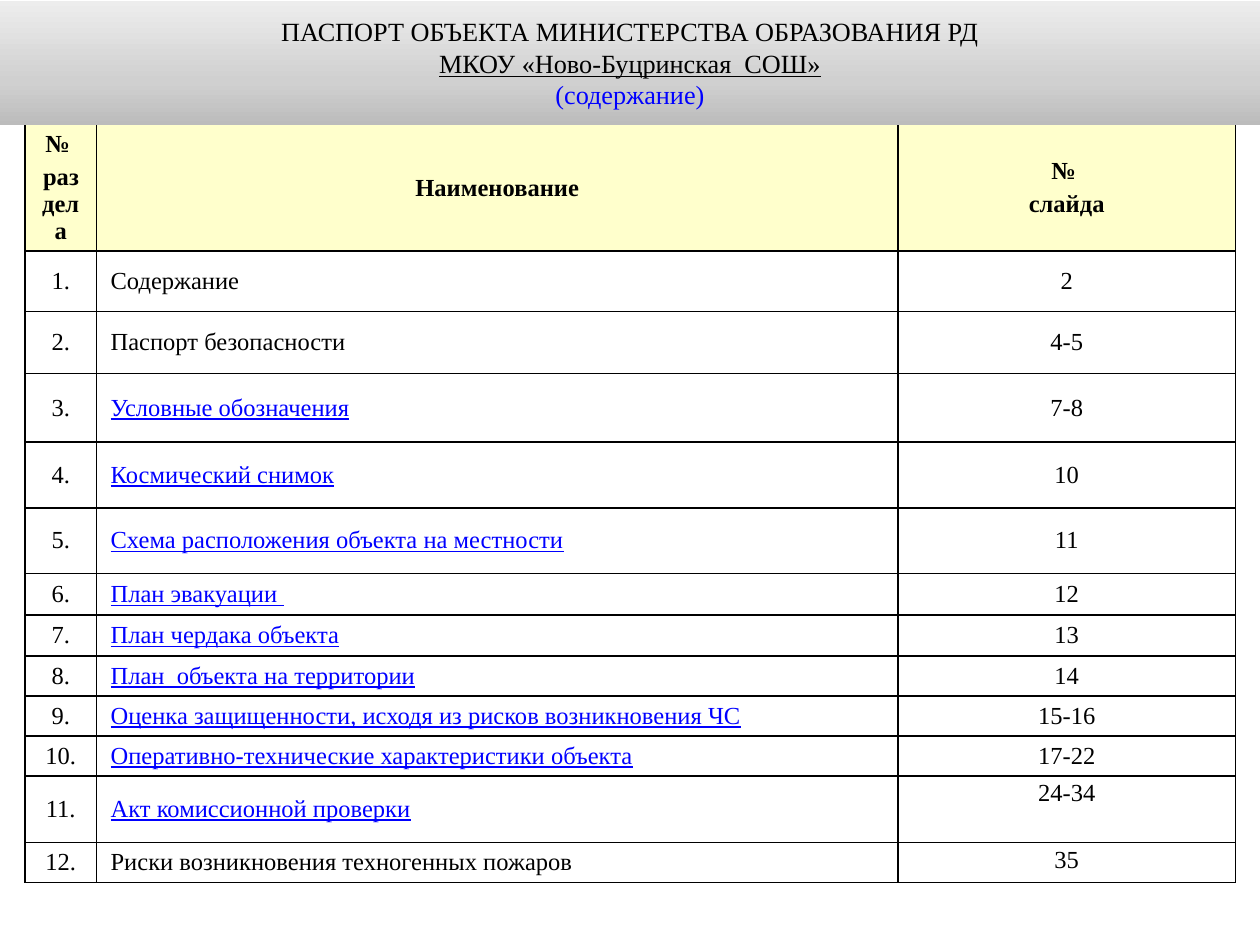
from copy import deepcopy
from dataclasses import dataclass

from lxml.etree import SubElement
from pptx import Presentation
from pptx.dml.color import RGBColor as Color
from pptx.enum.shapes import MSO_SHAPE as Shape
from pptx.enum.text import MSO_ANCHOR as Anchor, PP_ALIGN as Align
from pptx.oxml.ns import qn
from pptx.util import Cm, Pt


@dataclass(frozen=True)
class Theme:
    font: str = "Times New Roman"
    title_size: int = 15
    table_size: int = 14
    text: str = "000000"
    link: str = "0000FF"
    header: str = "FFFFCC"
    body: str = "FFFFFF"
    banner: tuple = ((0, "BCBCBC"), (0.35, "D0D0D0"), (1, "EDEDED"))


theme = Theme()


def write(frame, text, size=theme.table_size, color=theme.text, bold=False, underline=False,
          align=Align.CENTER, before=0, after=0, spacing=1.0):
    paragraph = frame.paragraphs[0]
    if paragraph.runs:
        paragraph = frame.add_paragraph()
    paragraph.alignment = align
    paragraph.space_before = Pt(before)
    paragraph.space_after = Pt(after)
    paragraph.line_spacing = spacing
    run = paragraph.add_run()
    run.text = text
    run.font.name = theme.font
    run.font.size = Pt(size)
    run.font.bold = bold
    run.font.underline = underline
    run.font.color.rgb = Color.from_string(color)


presentation = Presentation()
presentation.slide_width = Cm(25.4)
presentation.slide_height = Cm(19.05)
slide = presentation.slides.add_slide(presentation.slide_layouts[6])

headings = [["№ ", "раздела"], ["Наименование"], ["№ ", "слайда"]]
sections = [
    ("Содержание", "2", False),
    ("Паспорт безопасности", "4-5", False),
    ("Условные обозначения", "7-8", True),
    ("Космический снимок", "10", True),
    ("Схема расположения объекта на местности", "11", True),
    ("План эвакуации ", "12", True),
    ("План чердака объекта", "13", True),
    ("План  объекта на территории", "14", True),
    ("Оценка защищенности, исходя из рисков возникновения ЧС", "15-16", True),
    ("Оперативно-технические характеристики объекта", "17-22", True),
    ("Акт комиссионной проверки", "24-34", True),
    ("Риски возникновения техногенных пожаров", "35", False),
]
column_widths = [1.45, 16.15, 6.81]
row_heights = [2.52, 1.22, 1.25, 1.38, 1.33, 1.32, 0.84, 0.82, 0.8, 0.8, 0.8, 1.34, 0.8]

table = slide.shapes.add_table(
    len(row_heights), len(column_widths), Cm(0.5), Cm(2.51),
    Cm(sum(column_widths)), Cm(sum(row_heights))).table
table.horz_banding = False
for column, width in zip(table.columns, column_widths):
    column.width = Cm(width)
for row, height in zip(table.rows, row_heights):
    row.height = Cm(height)

for index, row in enumerate(table.rows):
    for cell in row.cells:
        cell.vertical_anchor = Anchor.MIDDLE
        cell.margin_left = cell.margin_right = Cm(0.28)
        cell.margin_top = cell.margin_bottom = Cm(0.13)
        properties = cell._tc.get_or_add_tcPr()
        for side in ("a:lnL", "a:lnR", "a:lnT", "a:lnB"):
            border = SubElement(properties, qn(side), w=str(Pt(1)))
            fill = SubElement(border, qn("a:solidFill"))
            SubElement(fill, qn("a:srgbClr"), val=theme.text)
        cell.fill.solid()
        cell.fill.fore_color.rgb = Color.from_string(theme.body if index else theme.header)

for cell, lines in zip(table.rows[0].cells, headings):
    for line in lines:
        write(cell.text_frame, line, bold=True, before=3)

for number, (name, pages, linked) in enumerate(sections, start=1):
    number_cell, name_cell, pages_cell = table.rows[number].cells
    write(number_cell.text_frame, f"{number}.")
    write(name_cell.text_frame, name, align=Align.LEFT, underline=linked,
          color=theme.link if linked else theme.text, before=3 if number <= 4 else 0)
    if number <= 10:
        write(pages_cell.text_frame, pages, before=3 if number <= 2 else 0)
    else:
        pages_cell.vertical_anchor = Anchor.TOP
        pages_cell.margin_left = pages_cell.margin_right = Cm(0.18)
        pages_cell.margin_top = pages_cell.margin_bottom = 0
        write(pages_cell.text_frame, pages, spacing=1.15, after=10)

banner = slide.shapes.add_shape(Shape.RECTANGLE, 0, Cm(0.02), Cm(25.4), Cm(2.5))
banner.shadow.inherit = False
banner.line.fill.background()
banner.fill.gradient()
banner.fill.gradient_angle = 90
stop_list = banner._element.spPr.find(qn("a:gradFill")).find(qn("a:gsLst"))
stop_list.append(deepcopy(stop_list[0]))
for stop, (position, color) in zip(banner.fill.gradient_stops, theme.banner):
    stop.position = position
    stop.color.rgb = Color.from_string(color)

title = banner.text_frame
title.word_wrap = True
title.vertical_anchor = Anchor.MIDDLE
write(title, "ПАСПОРТ ОБЪЕКТА МИНИСТЕРСТВА ОБРАЗОВАНИЯ РД", size=theme.title_size)
write(title, "МКОУ «Ново-Буцринская  СОШ»", size=theme.title_size, underline=True)
write(title, "(содержание)", size=theme.title_size, color=theme.link)

presentation.save("out.pptx")
